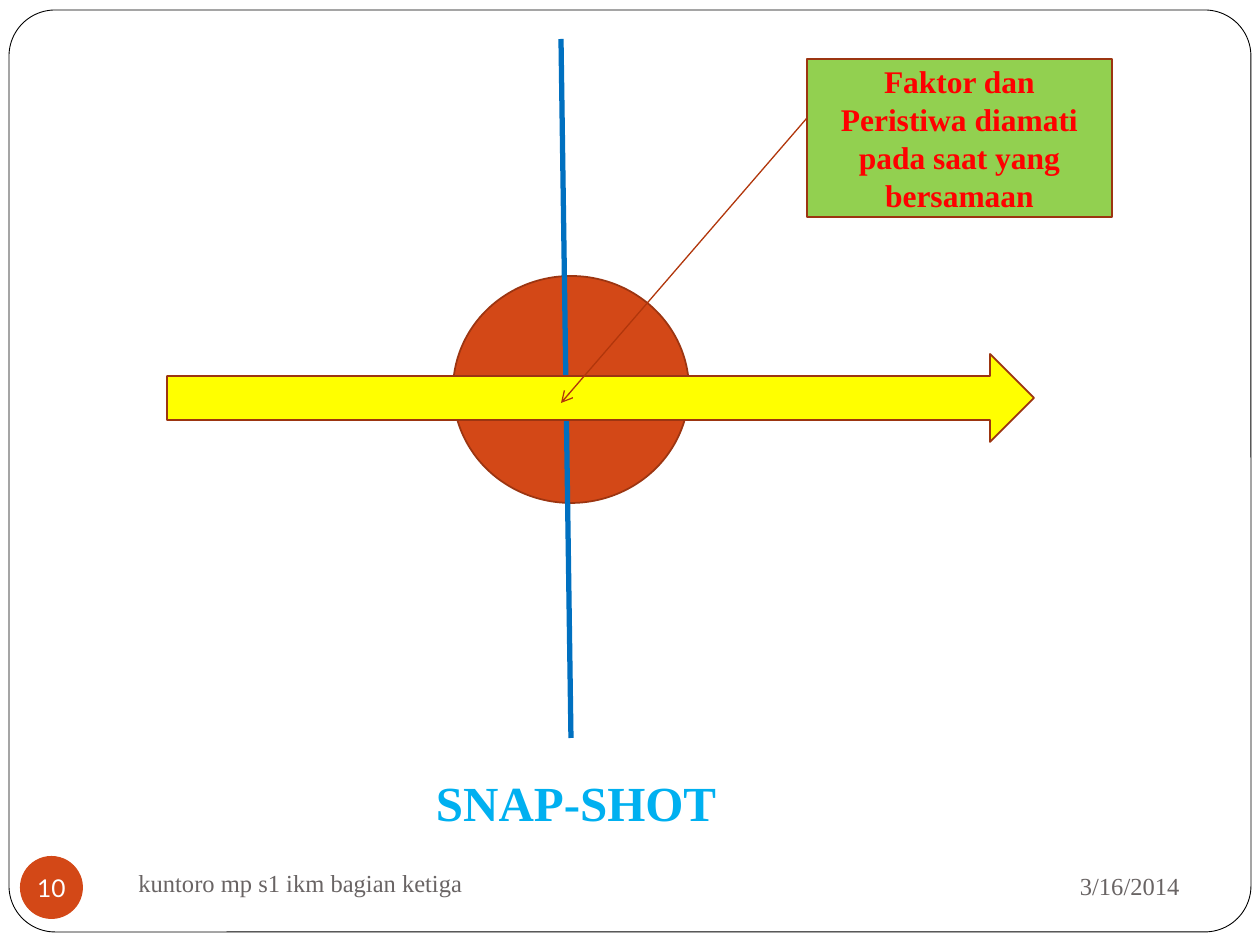
from dataclasses import dataclass

from lxml.etree import SubElement
from pptx import Presentation
from pptx.dml.color import RGBColor
from pptx.enum.shapes import MSO_CONNECTOR as CONN, MSO_SHAPE as SHAPE
from pptx.enum.text import MSO_ANCHOR as ANCHOR, PP_ALIGN as ALIGN
from pptx.oxml.ns import qn
from pptx.util import Emu, Pt


@dataclass(frozen=True)
class Theme:
    """Colours, fonts and type sizes of the slide."""
    white: str = "FFFFFF"
    black: str = "000000"
    grey: str = "696464"
    orange: str = "D34817"
    outline: str = "9C3511"
    pointer: str = "B1360B"
    blue: str = "0070C0"
    sky: str = "00B0F0"
    yellow: str = "FFFF00"
    green: str = "92D050"
    red: str = "FF0000"
    serif: str = "Times New Roman"
    sans: str = "Lato"
    small: int = 14
    body: int = 18
    caption: int = 28


T = Theme()
PX_PER_INCH = 126


def px(n):
    """Turn whole pixels into EMU."""
    return Emu(round(n * 914400 / PX_PER_INCH))


def rgb(code):
    """Turn a hex code into a colour."""
    return RGBColor.from_string(code)


def write(sp, text, size, color, font=T.serif, bold=False, align=ALIGN.CENTER):
    """Put one formatted, vertically centred paragraph into a shape."""
    tf = sp.text_frame
    tf.word_wrap = True
    tf.vertical_anchor = ANCHOR.MIDDLE
    p = tf.paragraphs[0]
    p.text = text
    p.alignment = align
    f = p.runs[0].font
    f.name, f.size, f.bold = font, Pt(size), bold
    f.color.rgb = rgb(color)


def add_shape(s, kind, box, fill=None, line=None, width=1):
    """Add a preset shape with optional fill and outline."""
    sp = s.shapes.add_shape(kind, *map(px, box))
    sp.shadow.inherit = False
    if fill:
        sp.fill.solid()
        sp.fill.fore_color.rgb = rgb(fill)
    else:
        sp.fill.background()
    if line:
        sp.line.color.rgb = rgb(line)
        sp.line.width = Pt(width)
    else:
        sp.line.fill.background()
    return sp


def add_line(s, start, end, color, width, arrow=False):
    """Add a straight line, with an open arrowhead at its end if asked."""
    c = s.shapes.add_connector(CONN.STRAIGHT, *map(px, start + end))
    c.line.color.rgb = rgb(color)
    c.line.width = Pt(width)
    if arrow:
        SubElement(c.line._get_or_add_ln(), qn("a:tailEnd"), type="arrow")
    SubElement(c._element.spPr, qn("a:effectLst"))


def add_footer(s, box, text, align):
    """Add a small grey footer text."""
    sp = s.shapes.add_textbox(*map(px, box))
    write(sp, text, T.small, T.grey, align=align)


def add_badge(s, box, number):
    """Add the round slide number."""
    sp = add_shape(s, SHAPE.OVAL, box, T.orange)
    write(sp, number, T.small, T.white, T.sans)
    tf = sp.text_frame
    tf.word_wrap = False
    tf.margin_left = tf.margin_right = tf.margin_top = tf.margin_bottom = 0


def main():
    """Build and save the slide."""
    prs = Presentation()
    prs.slide_width, prs.slide_height = px(1260), px(945)
    s = prs.slides.add_slide(prs.slide_layouts[6])

    frame = add_shape(s, SHAPE.ROUNDED_RECTANGLE, (9, 10, 1242, 922),
                      T.white, T.black, 0.5)
    frame.adjustments[0] = 0.05
    add_footer(s, (851, 853, 341, 66), "3/16/2014", ALIGN.RIGHT)
    add_footer(s, (126, 851, 546, 63), "kuntoro mp s1 ikm bagian ketiga", ALIGN.LEFT)
    add_badge(s, (20, 856, 63, 63), "10")

    add_shape(s, SHAPE.OVAL, (453, 276, 236, 227), T.orange, T.outline)
    add_line(s, (561, 39), (571, 738), T.blue, 3)
    add_shape(s, SHAPE.RIGHT_ARROW, (167, 354, 867, 88), T.yellow, T.outline)
    caption = add_shape(s, SHAPE.ROUNDED_RECTANGLE, (384, 748, 384, 108))
    write(caption, "SNAP-SHOT", T.caption, T.sky, bold=True)
    add_line(s, (807, 118), (561, 403), T.pointer, 0.75, arrow=True)
    note = add_shape(s, SHAPE.RECTANGLE, (807, 59, 305, 158), T.green, T.outline)
    write(note, "Faktor dan Peristiwa diamati pada saat yang bersamaan",
          T.body, T.red, bold=True)

    prs.save("out.pptx")


if __name__ == "__main__":
    main()
